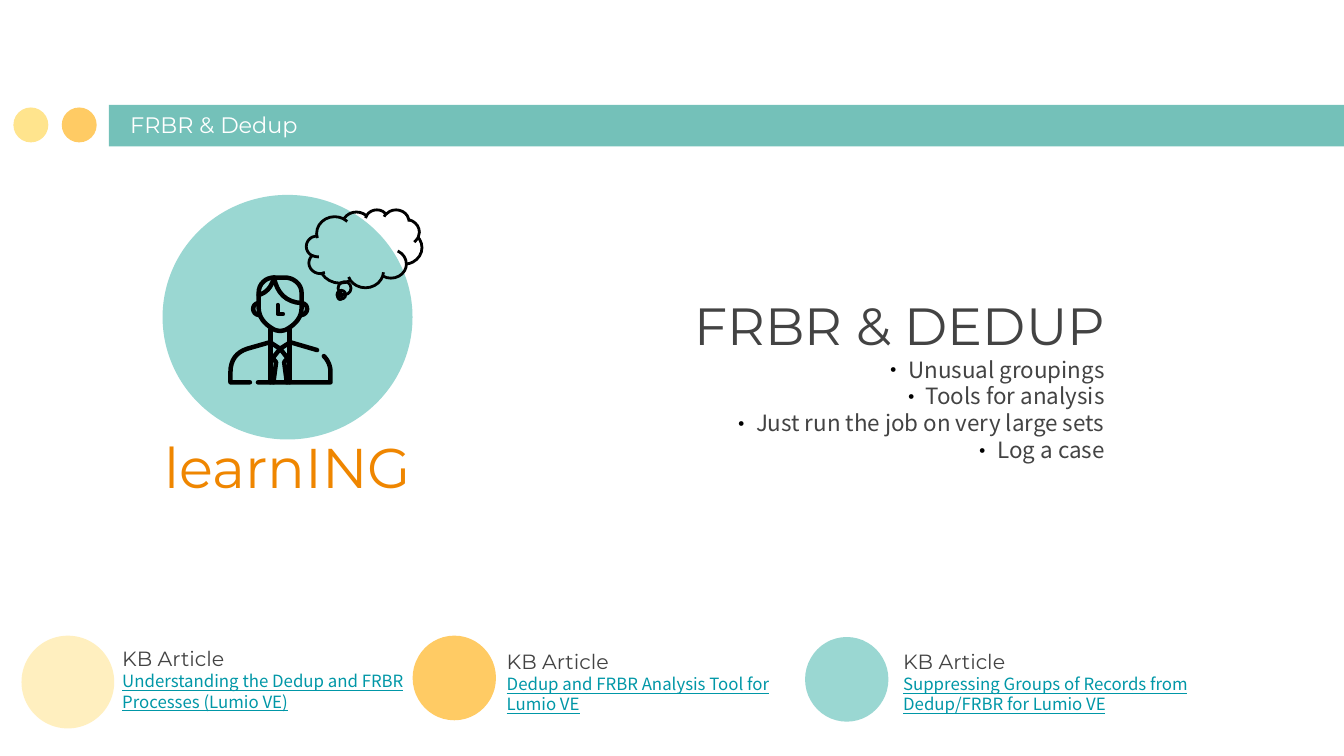
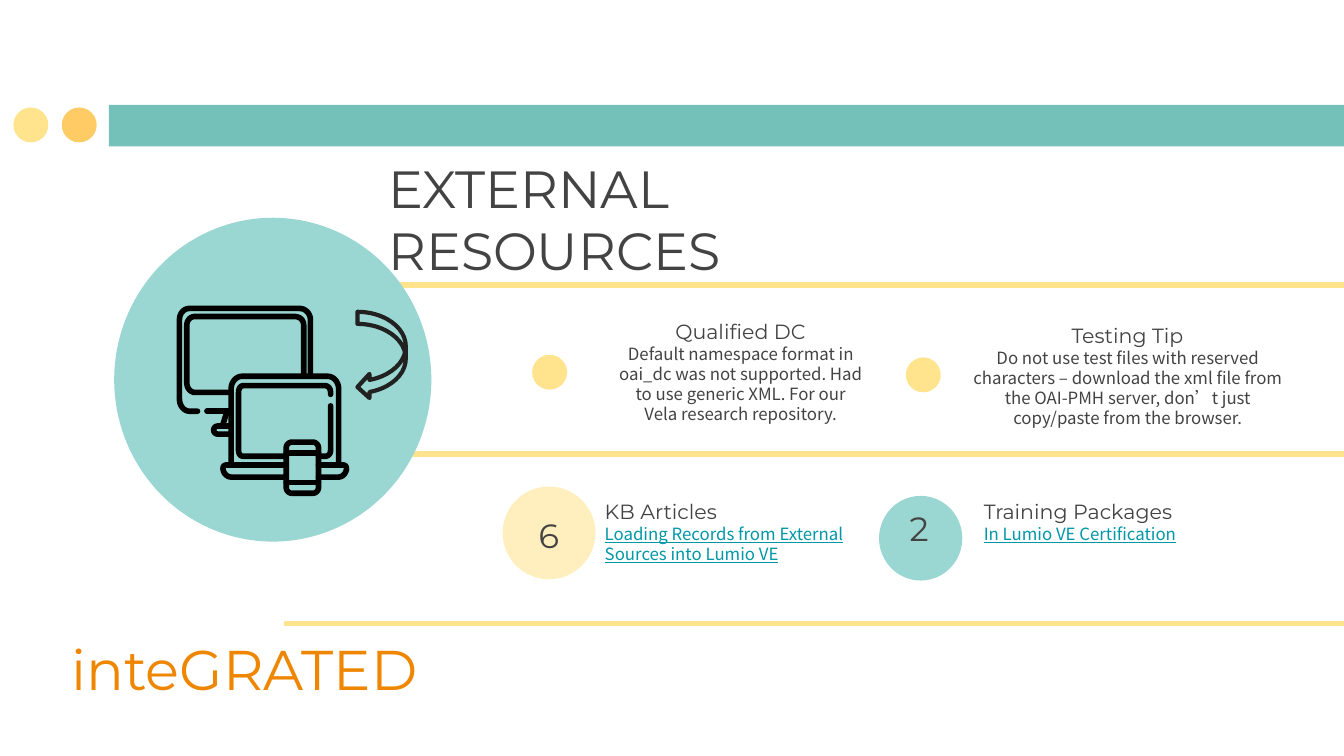
from dataclasses import dataclass

from lxml.etree import SubElement
from pptx import Presentation
from pptx.dml.color import RGBColor
from pptx.enum.shapes import MSO_CONNECTOR, MSO_SHAPE
from pptx.enum.text import MSO_ANCHOR, MSO_AUTO_SIZE, PP_ALIGN
from pptx.oxml.ns import qn
from pptx.util import Inches, Pt


@dataclass(frozen=True)
class Theme:
    teal: str = "74C1B9"
    aqua: str = "9AD7D2"
    amber: str = "FFCB64"
    yellow: str = "FFE48D"
    orange: str = "EF8600"
    link: str = "0097A7"
    ink: str = "434343"
    arrow: str = "212121"
    black: str = "000000"
    white: str = "FFFFFF"
    heading_font: str = "Montserrat"
    body_font: str = "Noto Sans CJK SC"
    motto_size: float = 30
    headline_size: float = 28
    number_size: float = 18
    list_size: float = 12
    label_size: float = 11
    body_size: float = 9


THEME = Theme()
SNUG = (0, 0.01, 0, 0)
ROOMY = (0.1, 0.1, 0.1, 0.1)
NUMBER = (0.1, 0.05, 0.1, 0.05)

HEADLINE = {"name": THEME.heading_font, "size": THEME.headline_size, "color": THEME.ink}
MOTTO = {"name": THEME.heading_font, "size": THEME.motto_size, "color": THEME.orange}
BAND_TITLE = {"name": THEME.heading_font, "size": THEME.list_size, "color": THEME.white}
LABEL = {"name": THEME.heading_font, "size": THEME.label_size, "color": THEME.ink}
COUNT = {"name": THEME.heading_font, "size": THEME.number_size, "color": THEME.ink}
LISTING = {"name": THEME.body_font, "size": THEME.list_size, "color": THEME.ink}
BODY = {"name": THEME.body_font, "size": THEME.body_size, "color": THEME.ink}
LINK = {"name": THEME.body_font, "size": THEME.body_size, "color": THEME.link, "underline": True}

PERSON = (
    "M 192.5 218 L 192.5 229 C 192.5 236 197 241 202 244 C 206 247 211 247 215 244 "
    "C 220 241 224.5 236 224.5 229 L 224.5 218 C 224.5 211 218 206.5 212 206.5 "
    "L 204 206.5 C 198 206.5 192.5 211 192.5 218 Z",
    "M 204 206.5 C 206 218 213 225 224.5 225.5",
    "M 204 206.5 C 202 214 198 218 192.5 219.5",
    "M 192.5 225.5 C 187 226 187 234 193 234.5",
    "M 224.5 225.5 C 230 226 230 234 224 234.5",
    "M 206.8 227 L 206.8 233.7 L 210.5 233.7",
    "M 201.5 245 L 201.5 284.5",
    "M 215.5 245 L 215.5 284.5",
    "M 201.5 255 L 208.5 259.5 L 214 266.5 L 211.5 269.5 L 213.5 284.5",
    "M 215.5 255 L 208.5 259.5 L 203 266.5 L 205.5 269.5 L 203.5 284.5",
    "M 201.5 254.5 L 184 259.5 C 176 262 171.5 268 171.5 277 L 171.5 284.5 L 186 284.5",
    "M 192 284.5 L 246 284.5 L 246 277 C 246 272 244 268 241 265",
    "M 215.5 254.5 L 236 260.5",
)
DEVICES = (
    "M 147 306 L 141 306 C 137 306 133.5 302 133.5 297 L 133.5 238 C 133.5 233 137 229.5 141 229.5 "
    "L 223 229.5 C 227 229.5 231 233 231 238 L 231 278",
    "M 170 292 L 145 292 C 142 292 139 289 139 285 L 139 242 C 139 238 142 235.5 145 235.5 "
    "L 219 235.5 C 223 235.5 226 238 226 242 L 226 278",
    "M 154 306 L 170 306",
    "M 169 306 L 165.5 317",
    "M 170 317 L 162 317 C 158 317 158 323 162 323 L 170 323",
    "M 172 346 L 172 289 C 172 284 176 280 180 280 L 244 280 C 248 280 252 284 252 289 L 252 346",
    "M 246 293.5 L 246 292 C 246 289 244 287 242 287 L 181 287 C 179 287 177.5 289 177.5 292 "
    "L 177.5 335 C 177.5 338 179 339.5 181 339.5 L 213 339.5",
    "M 246 302 L 246 335 C 246 338 244 339.5 242 339.5 L 237 339.5",
    "M 213 346 L 168 346 C 164 346 166 355 172 355 L 213 355",
    "M 237 346 L 256 346 C 260 347 257 355 252 355 L 237 355",
    "M 217 329 L 233 329 C 235 329 237 331 237 333 L 237 363 C 237 365 235 367 233 367 "
    "L 217 367 C 215 367 213 365 213 363 L 213 333 C 213 331 215 329 217 329 Z",
    "M 213 337 L 237 337",
    "M 213 359 L 237 359",
)


def trace(outline, steps=8):
    points, values = [], []
    for token in outline.replace("Z", "").split():
        if token in "MLC":
            values = []
            needed = 6 if token == "C" else 2
            continue
        values.append(float(token) / 100)
        if len(values) < needed:
            continue
        if needed == 2:
            points.append(tuple(values))
            continue
        corners = [points[-1], values[:2], values[2:4], values[4:]]
        for step in range(1, steps + 1):
            t = step / steps
            weights = ((1 - t) ** 3, 3 * t * (1 - t) ** 2, 3 * t * t * (1 - t), t ** 3)
            points.append(tuple(sum(w * c[axis] for w, c in zip(weights, corners)) for axis in (0, 1)))
    return [(Inches(x), Inches(y)) for x, y in points]


class Deck:
    def __init__(self):
        self.presentation = Presentation()
        self.presentation.slide_width = Inches(10)
        self.presentation.slide_height = Inches(10) * 9 // 16
        self.slide = None

    def start_slide(self):
        self.slide = self.presentation.slides.add_slide(self.presentation.slide_layouts[6])
        self.shape(MSO_SHAPE.RECTANGLE, (0.81, 0.78, 9.5, 0.31), THEME.teal)
        for left, color in ((0.46, THEME.amber), (0.1, THEME.yellow)):
            self.circle((left, 0.8, 0.26, 0.26), color)

    def paint(self, shape, fill=None, line=None, width=1.5):
        shape.shadow.inherit = False
        if fill:
            shape.fill.solid()
            shape.fill.fore_color.rgb = RGBColor.from_string(fill)
        else:
            shape.fill.background()
        if line:
            shape.line.color.rgb = RGBColor.from_string(line)
            shape.line.width = Pt(width)
        else:
            shape.line.fill.background()

    def shape(self, kind, box, fill=None, line=None, width=1.5):
        shape = self.slide.shapes.add_shape(kind, *map(Inches, box))
        self.paint(shape, fill, line, width)
        return shape

    def circle(self, box, fill, opacity=100):
        shape = self.shape(MSO_SHAPE.OVAL, box, fill)
        if opacity < 100:
            color = shape.element.spPr.find(qn("a:solidFill"))[0]
            SubElement(color, qn("a:alpha")).set("val", str(opacity * 1000))

    def rule(self, left, top, length):
        connector = self.slide.shapes.add_connector(
            MSO_CONNECTOR.STRAIGHT, Inches(left), Inches(top), Inches(left + length), Inches(top))
        connector.line.color.rgb = RGBColor.from_string(THEME.yellow)
        connector.line.width = Pt(3)
        SubElement(connector.element.spPr, qn("a:effectLst"))

    def icon(self, outlines, width):
        builder = None
        for outline in outlines:
            start, *rest = trace(outline)
            if builder is None:
                builder = self.slide.shapes.build_freeform(*start, scale=1.0)
            else:
                builder.move_to(*start)
            builder.add_line_segments(rest, close=outline.endswith("Z"))
        shape = builder.convert_to_shape()
        self.paint(shape, line=THEME.black, width=width)
        stroke = shape.element.spPr.find(qn("a:ln"))
        stroke.set("cap", "rnd")
        SubElement(stroke, qn("a:round"))

    def text(self, box, lines, insets=SNUG, align=PP_ALIGN.LEFT, bulleted=(), **frame_format):
        frame = self.slide.shapes.add_textbox(*map(Inches, box)).text_frame
        sides = ("margin_left", "margin_top", "margin_right", "margin_bottom")
        settings = {"word_wrap": True, **dict(zip(sides, map(Inches, insets))), **frame_format}
        for name, value in settings.items():
            setattr(frame, name, value)
        for index, (words, style) in enumerate(lines):
            paragraph = frame.paragraphs[0] if index == 0 else frame.add_paragraph()
            paragraph.alignment = align
            run = paragraph.add_run()
            run.text = words
            for name, value in style.items():
                if name == "color":
                    run.font.color.rgb = RGBColor.from_string(value)
                else:
                    setattr(run.font, name, Pt(value) if name == "size" else value)
            if index in bulleted:
                self.bullet(paragraph)

    def bullet(self, paragraph):
        properties = paragraph._p.get_or_add_pPr()
        properties.set("marL", str(Inches(0.19)))
        properties.set("indent", str(-Inches(0.19)))
        color = SubElement(properties, qn("a:buClr"))
        SubElement(color, qn("a:srgbClr")).set("val", THEME.black)
        SubElement(properties, qn("a:buFont")).set("typeface", THEME.body_font)
        SubElement(properties, qn("a:buChar")).set("char", "•")

    def motto(self, left, top, words):
        self.text((left, top, 3.58, 0.62), [(words, MOTTO)], ROOMY, PP_ALIGN.CENTER)

    def resource(self, left, top, width, label, link):
        self.text((left, top, width, 0.54), [(label, LABEL), (link, LINK)])

    def tip(self, box, label, words):
        self.text(box, [(label, LABEL), (words, BODY)], ROOMY, PP_ALIGN.CENTER)

    def count(self, left, top, number):
        self.text((left, top, 0.36, 0.4), [(number, COUNT)], NUMBER,
                  word_wrap=False, auto_size=MSO_AUTO_SIZE.SHAPE_TO_FIT_TEXT)


def add_dedup_slide(deck):
    deck.start_slide()
    deck.circle((1.21, 1.45, 1.86, 1.82), THEME.aqua)
    deck.icon(PERSON, 2.4)
    deck.circle((2.5, 2.18, 0.04, 0.04), THEME.black)
    deck.shape(MSO_SHAPE.CLOUD_CALLOUT, (2.28, 1.56, 0.86, 0.58), line=THEME.black)
    deck.motto(0.35, 3.12, "learnING")
    points = ("Unusual groupings", "Tools for analysis",
              "Just run the job on very large sets", "Log a case")
    deck.text((4.53, 2.17, 3.69, 1.93),
              [("FRBR & DEDUP", HEADLINE)] + [(point, LISTING) for point in points],
              align=PP_ALIGN.RIGHT, bulleted=range(1, 5))
    articles = (
        (0.91, 4.8, 2.46, "Understanding the Dedup and FRBR Processes (Lumio VE)"),
        (3.77, 4.82, 2.15, "Dedup and FRBR Analysis Tool for Lumio VE"),
        (6.72, 4.82, 2.46, "Suppressing Groups of Records from Dedup/FRBR for Lumio VE"),
    )
    for left, top, width, link in articles:
        deck.resource(left, top, width, "KB Article", link)
    deck.circle((0.16, 4.73, 0.69, 0.69), THEME.yellow, 56)
    deck.circle((3.07, 4.73, 0.62, 0.63), THEME.amber)
    deck.circle((5.99, 4.74, 0.62, 0.63), THEME.aqua)
    deck.text((0.87, 0.79, 5.48, 0.34), [("FRBR & Dedup", BAND_TITLE)], ROOMY,
              vertical_anchor=MSO_ANCHOR.BOTTOM)


def add_resources_slide(deck):
    deck.start_slide()
    for left, top in ((2.02, 2.12), (2.02, 3.38), (2.11, 4.64)):
        deck.rule(left, top, 8.28)
    for left, top in ((6.74, 2.66), (3.96, 2.64)):
        deck.circle((left, top, 0.26, 0.26), THEME.yellow)
    deck.tip((4.5, 2.27, 2.02, 0.95), "Qualified DC",
             "Default namespace format in oai_dc was not supported. "
             "Had to use generic XML. For our Vela research repository.")
    deck.tip((7.11, 2.3, 2.56, 0.95), "Testing Tip",
             "Do not use test files with reserved characters – download the xml file "
             "from the OAI-PMH server, don’t just copy/paste from the browser.")
    deck.circle((0.85, 1.62, 2.36, 2.41), THEME.aqua)
    deck.icon(DEVICES, 3)
    deck.motto(0.03, 4.62, "inteGRATED")
    deck.text((2.89, 1.15, 3.55, 0.49), [("EXTERNAL RESOURCES", HEADLINE)])
    deck.shape(MSO_SHAPE.CURVED_LEFT_ARROW, (2.66, 2.32, 0.36, 0.65), line=THEME.arrow, width=2.25)
    deck.resource(4.5, 3.7, 1.94, "KB Articles", "Loading Records from External Sources into Lumio VE")
    deck.circle((3.74, 3.62, 0.69, 0.69), THEME.yellow, 56)
    deck.count(3.91, 3.78, "6")
    deck.resource(7.32, 3.7, 2.46, "Training Packages", "In Lumio VE Certification")
    deck.circle((6.54, 3.69, 0.62, 0.63), THEME.aqua)
    deck.count(6.67, 3.73, "2")


def main():
    deck = Deck()
    add_dedup_slide(deck)
    add_resources_slide(deck)
    deck.presentation.save("out.pptx")


if __name__ == "__main__":
    main()
